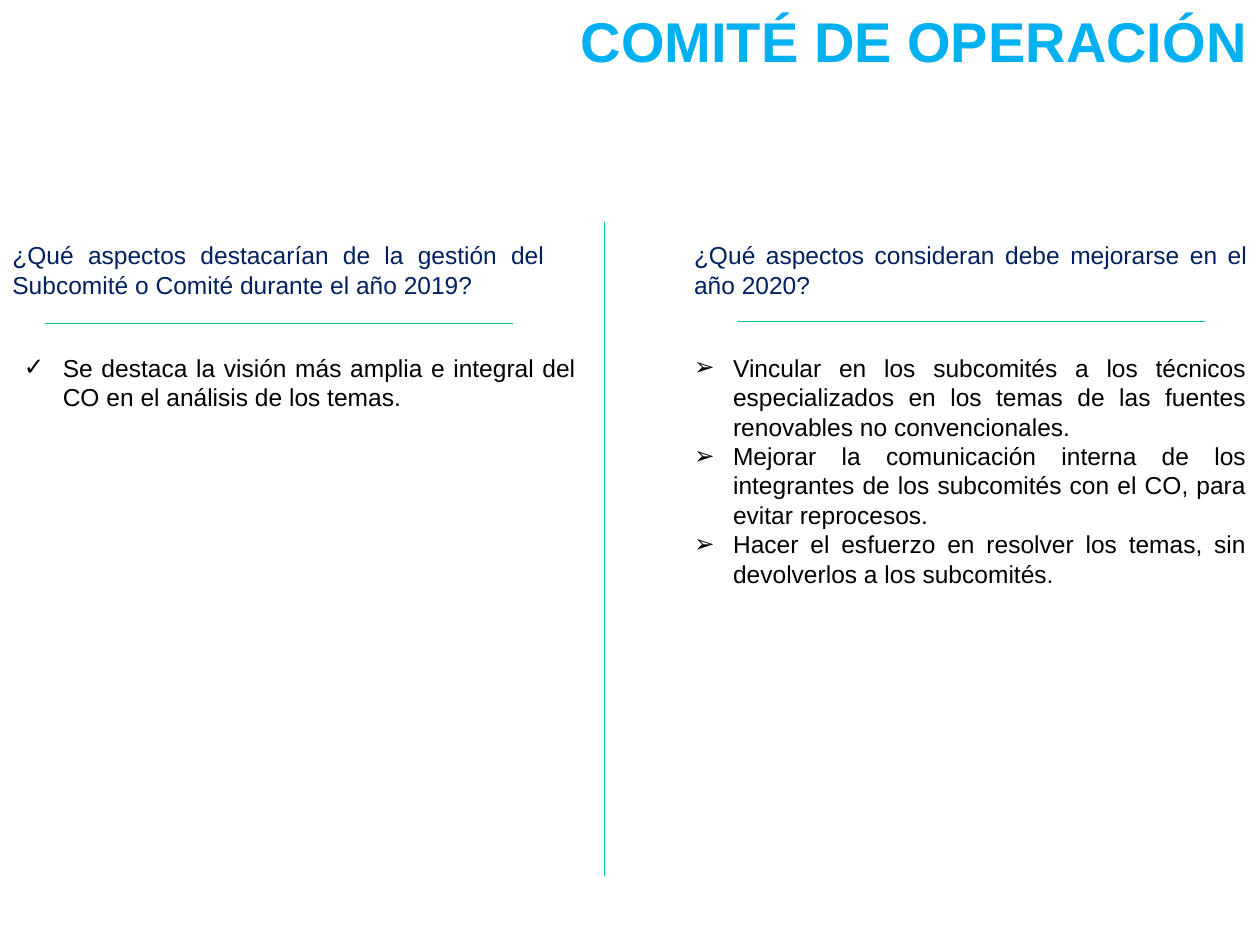
from lxml.etree import SubElement
from pptx import Presentation
from pptx.dml.color import RGBColor
from pptx.enum.shapes import MSO_CONNECTOR as Connector
from pptx.enum.text import MSO_ANCHOR as Anchor, MSO_AUTO_SIZE as AutoSize, PP_ALIGN as Align
from pptx.oxml.ns import qn
from pptx.util import Inches, Pt

FONT = "Arial"
SKY = RGBColor(0x00, 0xB0, 0xF0)
NAVY = RGBColor(0x00, 0x20, 0x60)
GREEN = RGBColor(0x00, 0xC8, 0x96)
BLACK = RGBColor(0x00, 0x00, 0x00)

WIDTH, HEIGHT = 10, 7.5
QUESTION_TOP, ANSWER_TOP, TEXT_HEIGHT = 1.86, 2.75, 0.57
ANSWER_WIDTH, RULE_WIDTH = 4.58, 3.71
INDENT = Inches(0.31)


def add_run(paragraph, text, size, color, bold=False):
    run = paragraph.add_run()
    run.text = text
    run.font.name = FONT
    run.font.size = Pt(size)
    run.font.bold = bold
    run.font.color.rgb = color


def add_bullet(paragraph, symbol):
    properties = paragraph._p.get_or_add_pPr()
    properties.set("marL", str(INDENT))
    properties.set("indent", str(-INDENT))
    bullet_color = SubElement(properties, qn("a:buClr"))
    SubElement(bullet_color, qn("a:srgbClr")).set("val", str(BLACK))
    SubElement(properties, qn("a:buFont")).set("typeface", FONT)
    SubElement(properties, qn("a:buChar")).set("char", symbol)


def add_text(slide, box, texts, color, bullet=None):
    shape = slide.shapes.add_textbox(*map(Inches, box))
    frame = shape.text_frame
    frame.word_wrap = True
    frame.auto_size = AutoSize.SHAPE_TO_FIT_TEXT
    for index, text in enumerate(texts):
        paragraph = frame.add_paragraph() if index else frame.paragraphs[0]
        paragraph.alignment = Align.JUSTIFY
        if bullet:
            add_bullet(paragraph, bullet)
        add_run(paragraph, text, 14, color)


def add_line(slide, start, end):
    points = map(Inches, (*start, *end))
    connector = slide.shapes.add_connector(Connector.STRAIGHT, *points)
    connector.line.color.rgb = GREEN
    connector.line.width = Pt(0.75)
    SubElement(connector._element.spPr, qn("a:effectLst"))


def add_title(slide, left, top, width, height):
    title = slide.shapes.title
    title.left, title.top, title.width, title.height = map(Inches, (left, top, width, height))
    frame = title.text_frame
    frame.word_wrap = True
    frame.auto_size = AutoSize.SHAPE_TO_FIT_TEXT
    frame.vertical_anchor = Anchor.TOP
    paragraph = frame.paragraphs[0]
    paragraph.alignment = Align.RIGHT
    add_run(paragraph, "COMITÉ DE OPERACIÓN", 32, SKY, bold=True)


def add_column(slide, left, width, question, rule_start, answer_left, answers, bullet):
    answer_height = 0.57 if len(answers) == 1 else 1.99
    add_text(slide, (left, QUESTION_TOP, width, TEXT_HEIGHT), [question], NAVY)
    rule_left, rule_top = rule_start
    add_line(slide, rule_start, (rule_left + RULE_WIDTH, rule_top))
    answer_box = (answer_left, ANSWER_TOP, ANSWER_WIDTH, answer_height)
    add_text(slide, answer_box, answers, BLACK, bullet)


def main():
    presentation = Presentation()
    presentation.slide_width = Inches(WIDTH)
    presentation.slide_height = Inches(HEIGHT)
    slide = presentation.slides.add_slide(presentation.slide_layouts[5])

    add_title(slide, 3.78, 0, WIDTH - 3.78, 0.64)
    add_line(slide, (4.8, 1.76), (4.8, 6.95))
    add_column(
        slide, 0, 4.42,
        "¿Qué aspectos destacarían de la gestión del Subcomité o Comité durante el año 2019?",
        (0.36, 2.57), 0.09,
        ["Se destaca la visión más amplia e integral del CO en el análisis de los temas."],
        "✓",
    )
    add_column(
        slide, 5.41, WIDTH - 5.41,
        "¿Qué aspectos consideran debe mejorarse en el año 2020?",
        (5.85, 2.55), 5.41,
        [
            "Vincular en los subcomités a los técnicos especializados en los temas de las "
            "fuentes renovables no convencionales.",
            "Mejorar la comunicación interna de los integrantes de los subcomités con el CO, "
            "para evitar reprocesos.",
            "Hacer el esfuerzo en resolver los temas, sin devolverlos a los subcomités.",
        ],
        "➢",
    )
    presentation.save("out.pptx")


if __name__ == "__main__":
    main()
